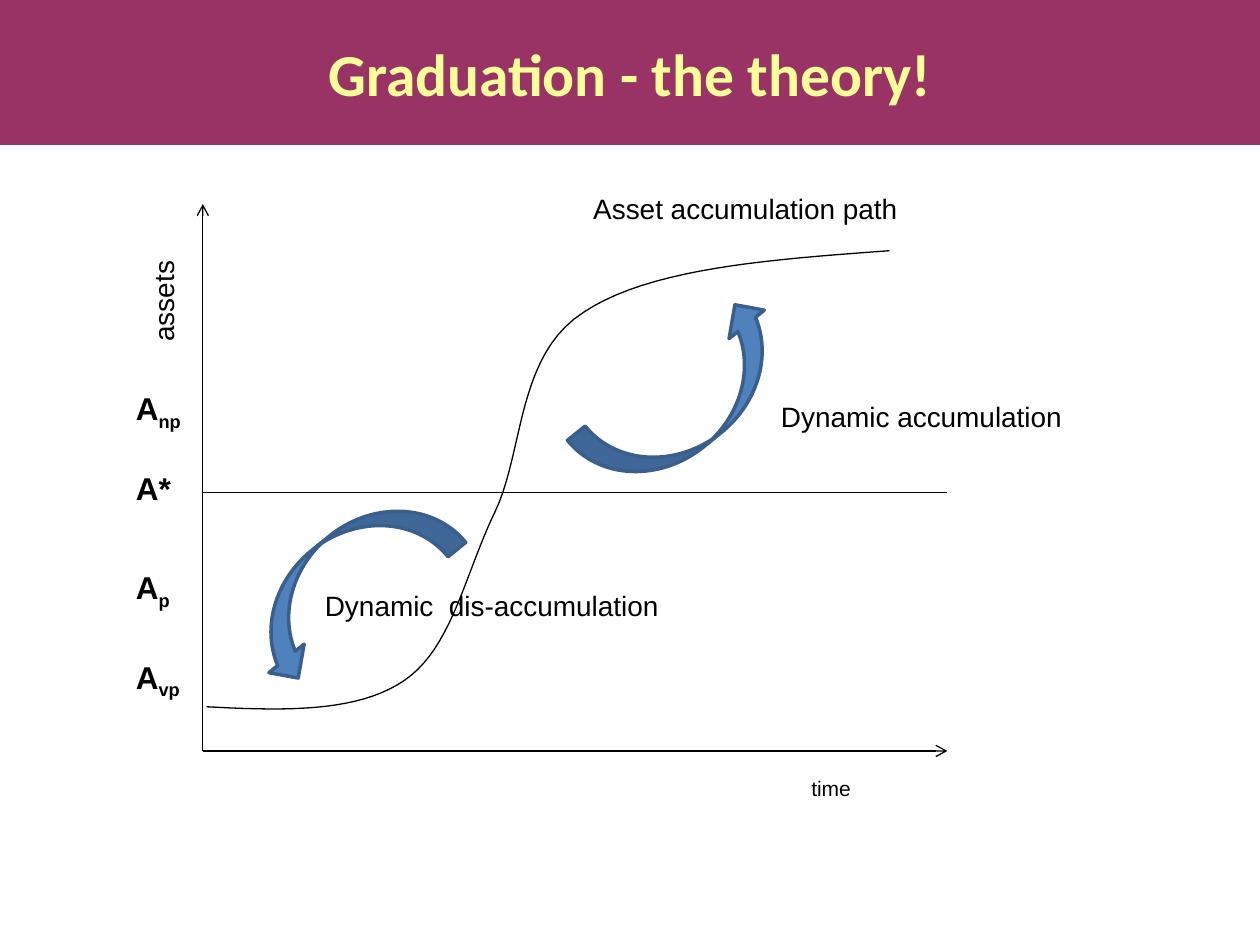
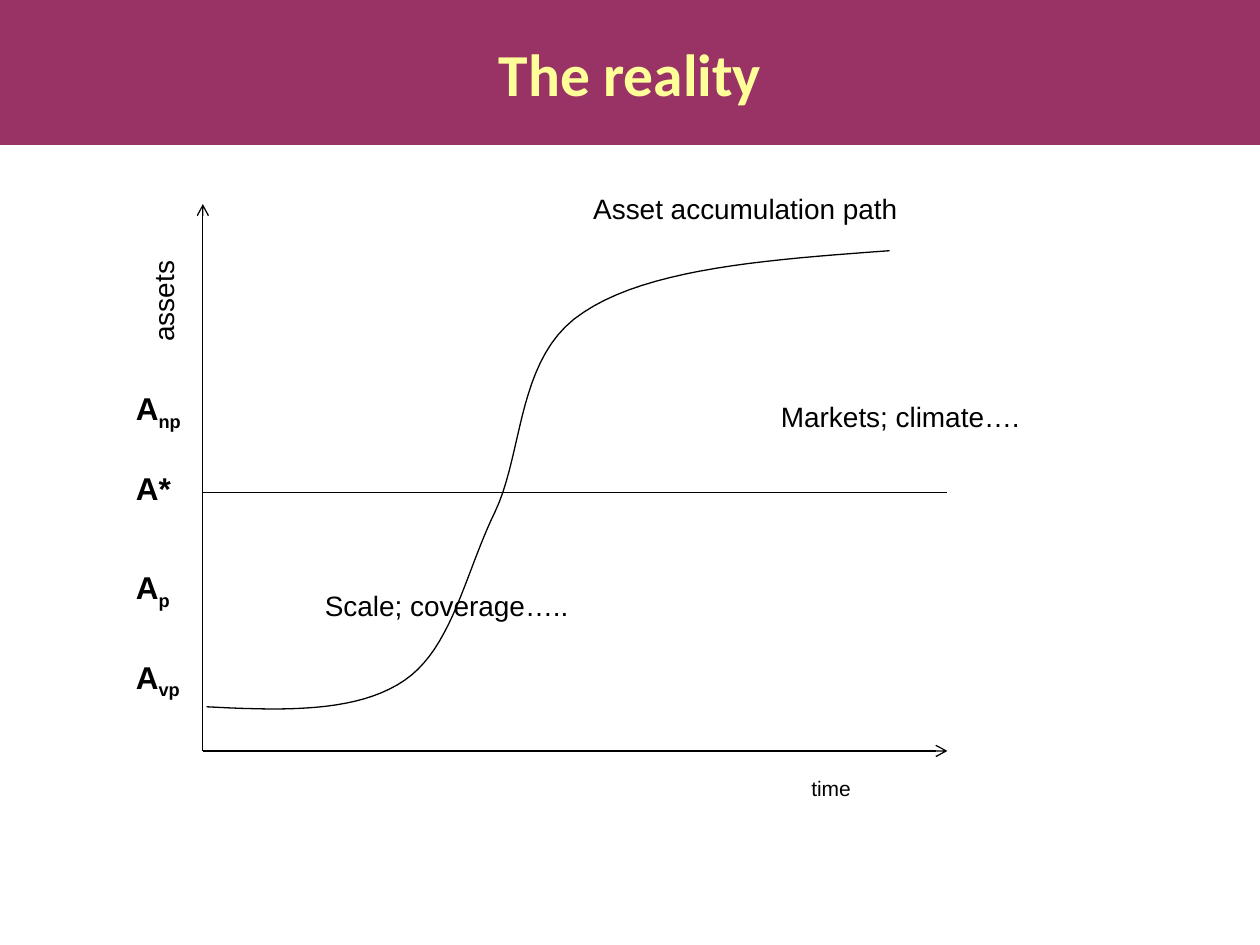
from collections import namedtuple

from lxml.etree import SubElement
from pptx import Presentation
from pptx.dml.color import RGBColor
from pptx.enum.shapes import MSO_CONNECTOR, MSO_SHAPE
from pptx.enum.text import MSO_ANCHOR, MSO_AUTO_SIZE, PP_ALIGN
from pptx.oxml.ns import qn
from pptx.util import Inches, Pt

BLACK = RGBColor(0x00, 0x00, 0x00)
PLUM = RGBColor(0x99, 0x33, 0x66)
PALE_YELLOW = RGBColor(0xFF, 0xFF, 0x99)
BLUE = RGBColor(0x4F, 0x81, 0xBD)
DARK_BLUE = RGBColor(0x3A, 0x5F, 0x8C)

Box = namedtuple("Box", "left top width height")
BAND = Box(0, 0, 10, 1.15)
PLOT = Box(1.61, 1.62, 5.91, 4.34)

THRESHOLD = 2.29
PATH_START = (0.03, 3.99)
PATH_CURVES = [
    [(0.63, 4.02), (1.22, 4.04), (1.60, 3.78)],
    [(1.98, 3.52), (2.08, 2.93), (2.32, 2.44)],
    [(2.55, 1.95), (2.49, 1.20), (3.02, 0.86)],
    [(3.54, 0.51), (4.49, 0.44), (5.45, 0.37)],
]
STEPS_PER_CURVE = 20
ASSET_LEVELS = [("np", 1.42), ("*", 2.05), ("p", 2.84), ("vp", 3.55)]


def style_font(font, size, color=BLACK, name="Arial", bold=False):
    font.size, font.name, font.bold = Pt(size), name, bold
    font.color.rgb = color


def add_label(slide, box, x, y, width, text, size=16, height=0.37, bold=False):
    label = slide.shapes.add_textbox(
        Inches(box.left + x), Inches(box.top + y), Inches(width), Inches(height))
    label.text_frame.word_wrap = True
    label.text_frame.auto_size = MSO_AUTO_SIZE.SHAPE_TO_FIT_TEXT
    paragraph = label.text_frame.paragraphs[0]
    paragraph.add_run().text = text
    style_font(paragraph.font, size, bold=bold)
    return label


def add_line(slide, box, start, end, arrow=False):
    line = slide.shapes.add_connector(
        MSO_CONNECTOR.STRAIGHT,
        Inches(box.left + start[0]), Inches(box.top + start[1]),
        Inches(box.left + end[0]), Inches(box.top + end[1]))
    line.line.color.rgb = BLACK
    line.line.width = Pt(0.75)
    if arrow:
        SubElement(line.line._get_or_add_ln(), qn("a:tailEnd")).set("type", "arrow")
    SubElement(line._element.spPr, qn("a:effectLst"))


def bezier(p0, p1, p2, p3, t):
    s = 1 - t
    return tuple(s**3 * a + 3 * s * s * t * b + 3 * s * t * t * c + t**3 * d
                 for a, b, c, d in zip(p0, p1, p2, p3))


def add_accumulation_path(slide, box):
    points, start = [PATH_START], PATH_START
    for first, second, end in PATH_CURVES:
        points += [bezier(start, first, second, end, step / STEPS_PER_CURVE)
                   for step in range(1, STEPS_PER_CURVE + 1)]
        start = end
    points = [(Inches(box.left + x), Inches(box.top + y)) for x, y in points]
    builder = slide.shapes.build_freeform(*points[0])
    builder.add_line_segments(points[1:], close=False)
    curve = builder.convert_to_shape()
    curve.shadow.inherit = False
    curve.fill.background()
    curve.line.color.rgb = BLACK
    curve.line.width = Pt(0.75)


def add_axes(slide, box):
    origin = (0, box.height)
    add_line(slide, box, origin, (0, 0), arrow=True)
    add_line(slide, box, origin, (box.width, box.height), arrow=True)
    add_line(slide, box, (0, THRESHOLD), (box.width, THRESHOLD))
    add_label(slide, box, 4.73, 4.49, 2.05, "time", size=12, height=0.3)
    add_label(slide, box, -1.34, -0.02, 2.05, "assets").rotation = 270
    for level, y in ASSET_LEVELS:
        label = add_label(slide, box, -0.63, y, 0.63, "A", 18, 0.4, bold=True)
        suffix = label.text_frame.paragraphs[0].add_run()
        suffix.text = level
        if level != "*":
            suffix._r.get_or_add_rPr().set("baseline", "-25000")


def add_dynamics_arrows(slide, box):
    for x, y, angle in [(0.18, 2.64, 141), (2.91, 1.2, 321)]:
        arrow = slide.shapes.add_shape(
            MSO_SHAPE.CURVED_UP_ARROW, Inches(box.left + x), Inches(box.top + y),
            Inches(1.89), Inches(0.72))
        arrow.rotation = angle
        arrow.shadow.inherit = False
        arrow.fill.solid()
        arrow.fill.fore_color.rgb = BLUE
        arrow.line.color.rgb = DARK_BLUE
        arrow.line.width = Pt(2)


def add_title_band(slide, box, title):
    band = slide.shapes.add_shape(MSO_SHAPE.RECTANGLE, *map(Inches, box))
    band.shadow.inherit = False
    band.fill.solid()
    band.fill.fore_color.rgb = PLUM
    band.line.fill.background()
    band.text_frame.vertical_anchor = MSO_ANCHOR.MIDDLE
    paragraph = band.text_frame.paragraphs[0]
    paragraph.text = title
    paragraph.alignment = PP_ALIGN.CENTER
    style_font(paragraph.font, 34, PALE_YELLOW, "Calibri", bold=True)


def add_asset_slide(deck, title, above_threshold, below_threshold, arrows=False):
    slide = deck.slides.add_slide(deck.slide_layouts[6])
    add_axes(slide, PLOT)
    add_accumulation_path(slide, PLOT)
    if arrows:
        add_dynamics_arrows(slide, PLOT)
    add_label(slide, PLOT, 3, -0.15, 2.99, "Asset accumulation path")
    add_label(slide, PLOT, 4.49, 1.5, 2.76, above_threshold)
    add_label(slide, PLOT, 0.87, 3, 3.39, below_threshold)
    add_title_band(slide, BAND, title)


def main():
    deck = Presentation()
    deck.slide_width, deck.slide_height = Inches(10), Inches(7.5)
    add_asset_slide(deck, "Graduation - the theory!", "Dynamic accumulation",
                    "Dynamic  dis-accumulation", arrows=True)
    add_asset_slide(deck, "The reality", "Markets; climate….", "Scale; coverage…..")
    deck.save("out.pptx")


if __name__ == "__main__":
    main()
